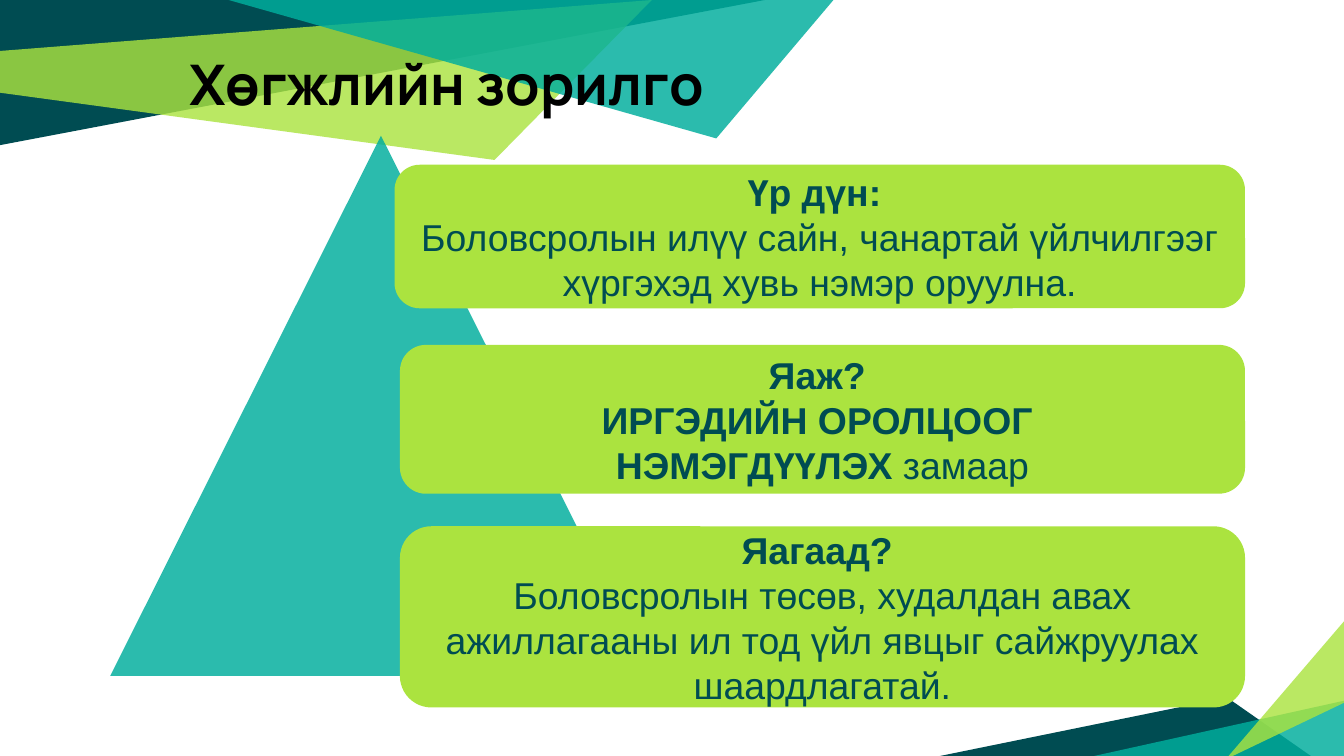
from pptx import Presentation
from pptx.dml.color import RGBColor
from pptx.enum import shapes, text
from pptx.oxml import parse_xml
from pptx.oxml.ns import nsdecls, qn
from pptx.util import Inches, Pt

DARK = RGBColor(0x00, 0x4C, 0x52)
LIME = RGBColor(0xAB, 0xE3, 0x3F)
TEAL = RGBColor(0x00, 0xAE, 0x9D)
BLACK = RGBColor(0, 0, 0)

WIDTH = Inches(10)
HEIGHT = WIDTH * 9 // 16

TITLE = "Хөгжлийн зорилго"

# Corner facets: colour, opacity in percent, corner points
FACETS = [
    (DARK, 100, [(0, 0), (0, 1.08), (5.69, 0)]),
    (LIME, 81, [(-0.01, 0.38), (0, 0.69), (3.68, 1.19), (4.85, 0)]),
    (DARK, 100, [(6.97, 5.63), (9.76, 5.63), (9.13, 5.19)]),
    (TEAL, 83, [(10.02, 5.21), (10.02, 5.65), (8.03, 5.65)]),
    (LIME, 81, [(10.02, 5.22), (10.02, 4.6), (9.12, 5.65)]),
    (TEAL, 83, [(1.7, 0), (5.33, 1.03), (6.21, -0.01), (6.09, 0)]),
]

# Cards: left, top, height, paragraphs of (text, bold) runs
RIGHT = 9.25
CARDS = [
    (2.95, 1.24, 1.04, [
        [("Үр дүн: ", True)],
        [("Боловсролын илүү сайн, чанартай үйлчилгээг "
          "хүргэхэд хувь нэмэр оруулна.", False)],
    ]),
    (2.99, 2.58, 1.08, [
        [("Яаж? ", True)],
        [("ИРГЭДИЙН ОРОЛЦООГ ", True)],
        [("НЭМЭГДҮҮЛЭХ", True), (" замаар", False)],
    ]),
    (2.99, 3.93, 1.32, [
        [("Яагаад? ", True)],
        [("Боловсролын төсөв, худалдан авах ажиллагааны ил тод "
          "үйл явцыг сайжруулах шаардлагатай.", False)],
    ]),
]


def paint(shape, color, alpha=100):
    """Flat fill without line or shadow; alpha is opacity in percent."""
    shape.shadow.inherit = False
    shape.fill.solid()
    shape.fill.fore_color.rgb = color
    shape.line.fill.background()
    if alpha < 100:
        tint = shape.element.spPr.find(qn("a:solidFill"))[0]
        tint.append(parse_xml(
            f'<a:alpha {nsdecls("a")} val="{alpha * 1000}"/>'))


def add_run(para, words, font, size, color, bold):
    para.alignment = text.PP_ALIGN.CENTER
    run = para.add_run()
    run.text = words
    run.font.name = font
    run.font.size = Pt(size)
    run.font.color.rgb = color
    run.font.bold = bold


def add_facet(slide, color, alpha, points):
    spots = [(Inches(x), Inches(y)) for x, y in points]
    pen = slide.shapes.build_freeform(*spots[0])
    pen.add_line_segments(spots[1:], close=True)
    paint(pen.convert_to_shape(), color, alpha)


def add_card(slide, left, top, height, paras):
    card = slide.shapes.add_shape(
        shapes.MSO_SHAPE.ROUNDED_RECTANGLE, Inches(left), Inches(top),
        Inches(RIGHT - left), Inches(height))
    paint(card, LIME)
    card.line.color.rgb = LIME
    card.line.width = Pt(2)
    frame = card.text_frame
    frame.word_wrap = True
    frame.vertical_anchor = text.MSO_ANCHOR.MIDDLE
    for i, runs in enumerate(paras):
        para = frame.add_paragraph() if i else frame.paragraphs[0]
        for words, bold in runs:
            add_run(para, words, "Arial", 20, DARK, bold)


def set_title(slide):
    title = slide.shapes.title
    title.left, title.top = Inches(1.14), Inches(0.27)
    title.width, title.height = Inches(4.37), Inches(0.53)
    frame = title.text_frame
    frame.word_wrap = True
    frame.auto_size = text.MSO_AUTO_SIZE.NONE
    frame.vertical_anchor = text.MSO_ANCHOR.TOP
    frame.margin_left = frame.margin_right = Inches(0.1)
    frame.margin_top = frame.margin_bottom = Inches(0.1)
    add_run(frame.paragraphs[0], TITLE, "Manrope", 30, BLACK, True)
    title.element.getparent().append(title.element)  # bring to front


def main():
    deck = Presentation()
    deck.slide_width, deck.slide_height = WIDTH, HEIGHT
    slide = deck.slides.add_slide(deck.slide_layouts[5])
    for facet in FACETS:
        add_facet(slide, *facet)
    peak = slide.shapes.add_shape(
        shapes.MSO_SHAPE.ISOSCELES_TRIANGLE, Inches(0.82), Inches(1.01),
        Inches(4.03), Inches(4.02))
    paint(peak, TEAL, 83)
    set_title(slide)
    for card in CARDS:
        add_card(slide, *card)
    deck.save("out.pptx")


if __name__ == "__main__":
    main()
